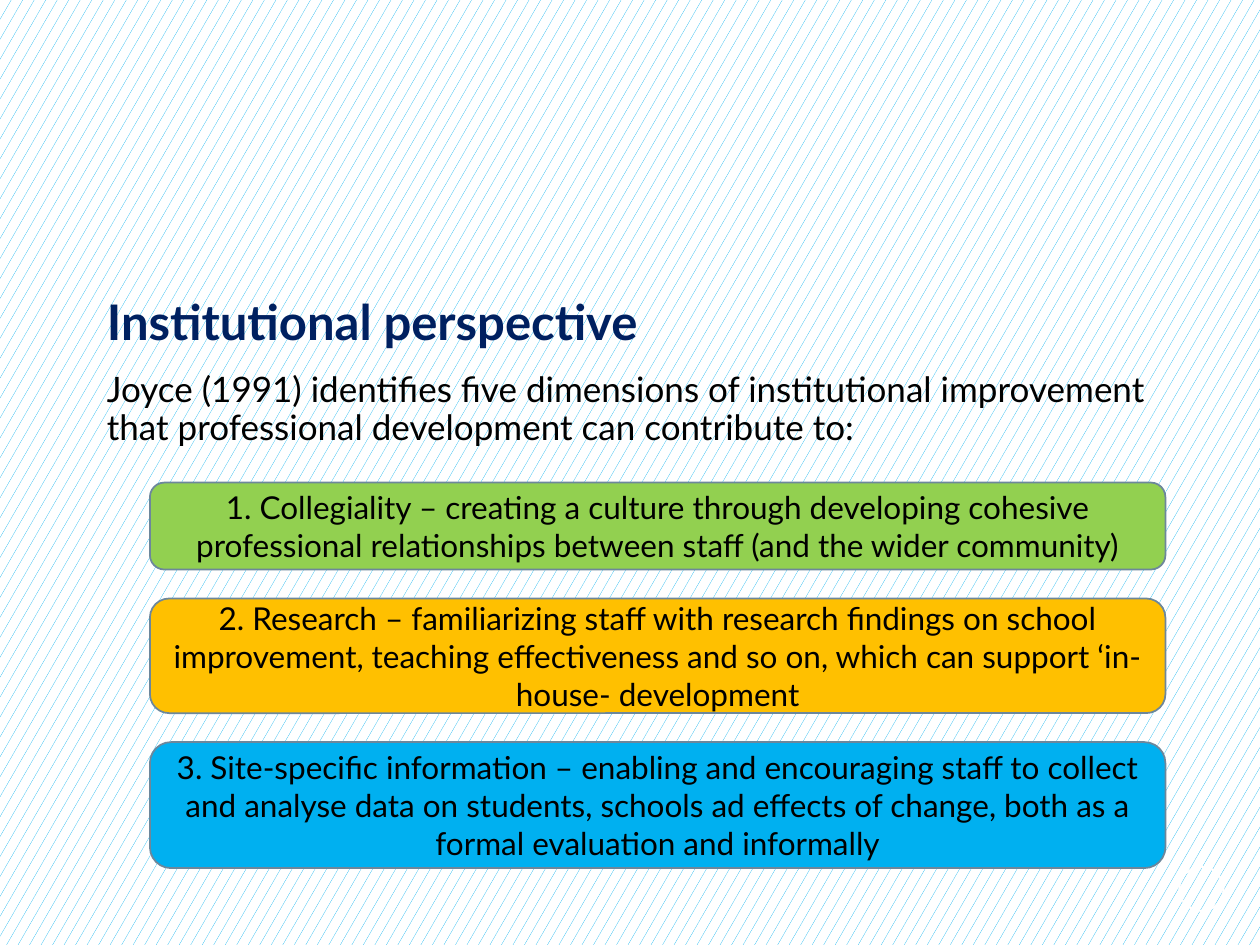
from pptx import Presentation
from pptx.dml.color import RGBColor
from pptx.enum import dml, shapes, text
from pptx import util as u

NAVY = RGBColor(0x00, 0x20, 0x60)
BLACK = RGBColor(0x00, 0x00, 0x00)
WHITE = RGBColor(0xFF, 0xFF, 0xFF)
GREEN = RGBColor(0x92, 0xD0, 0x50)
AMBER = RGBColor(0xFF, 0xC0, 0x00)
SKY = RGBColor(0x00, 0xB0, 0xF0)
SLATE = RGBColor(0x6D, 0x87, 0x9B)

COLUMNS, ROWS = 100, 75
CARD_LEFT, CARD_TOP, CARD_WIDTH, CARD_GAP = 11.9, 38.3, 80.6, 2.3

INTRO = [
    ("Institutional perspective", dict(size=u.Pt(28), bold=True), NAVY),
    ("Joyce (1991) identifies five dimensions of institutional improvement "
     "that professional development can contribute to:",
     dict(size=u.Pt(20), bold=False), BLACK),
]
CARDS = [
    (6.9, GREEN, "1. Collegiality – creating a culture through developing cohesive "
     "professional relationships between staff (and the wider community)"),
    (9.1, AMBER, "2. Research – familiarizing staff with research findings on school "
     "improvement, teaching effectiveness and so on, which can support "
     "‘in-house- development"),
    (10, SKY, "3. Site-specific information – enabling and encouraging staff to collect "
     "and analyse data on students, schools ad effects of change, both as a "
     "formal evaluation and informally"),
]


def assign(target, values):
    for name, value in values.items():
        setattr(target, name, value)


class SlideBuilder:
    font = "Lato"

    def __init__(self, deck):
        self.deck = deck
        self.page = deck.slides.add_slide(deck.slide_layouts[6])

    def area(self, left, top, width, height):
        column = self.deck.slide_width / COLUMNS
        row = self.deck.slide_height / ROWS
        return [round(size) for size in
                (left * column, top * row, width * column, height * row)]

    def background(self, front, back):
        fill = self.page.background.fill
        fill.patterned()
        fill.pattern = dml.MSO_PATTERN.SMALL_CONFETTI
        fill.fore_color.rgb = front
        fill.back_color.rgb = back

    def add_span(self, para, words, style, color):
        span = para.add_run()
        span.text = words
        assign(span.font, dict(name=self.font, **style))
        span.font.color.rgb = color

    def shape(self, kind, area, line, fill=None):
        shape = self.page.shapes.add_shape(kind, *self.area(*area))
        shape.shadow.inherit = False
        if fill is None:
            shape.fill.background()
        else:
            shape.fill.solid()
            shape.fill.fore_color.rgb = fill
        shape.line.color.rgb = line
        shape.line.width = u.Pt(1)
        return shape

    def text_box(self, area, paragraphs):
        frame = self.page.shapes.add_textbox(*self.area(*area)).text_frame
        frame.word_wrap = True
        for index, (words, style, color) in enumerate(paragraphs):
            para = frame.add_paragraph() if index else frame.paragraphs[0]
            assign(para, dict(line_spacing=0.9, space_before=u.Pt(12 if index else 0)))
            self.add_span(para, words, style, color)

    def card(self, area, fill, words):
        box = self.shape(shapes.MSO_SHAPE.ROUNDED_RECTANGLE, area, SLATE, fill)
        frame = box.text_frame
        assign(frame, dict(word_wrap=True, vertical_anchor=text.MSO_ANCHOR.MIDDLE))
        para = frame.paragraphs[0]
        para.alignment = text.PP_ALIGN.CENTER
        self.add_span(para, words, dict(size=u.Pt(18)), BLACK)


def main():
    deck = Presentation()
    assign(deck, dict(slide_width=u.Inches(10), slide_height=u.Inches(7.5)))
    builder = SlideBuilder(deck)
    builder.background(SKY, WHITE)
    builder.shape(shapes.MSO_SHAPE.OVAL, (93.6, 68.8, 3.5, 3.5), WHITE)
    builder.text_box((7.5, 23.2, 85, 48.5), INTRO)
    top = CARD_TOP
    for height, fill, words in CARDS:
        builder.card((CARD_LEFT, top, CARD_WIDTH, height), fill, words)
        top += height + CARD_GAP
    deck.save("out.pptx")


if __name__ == "__main__":
    main()
